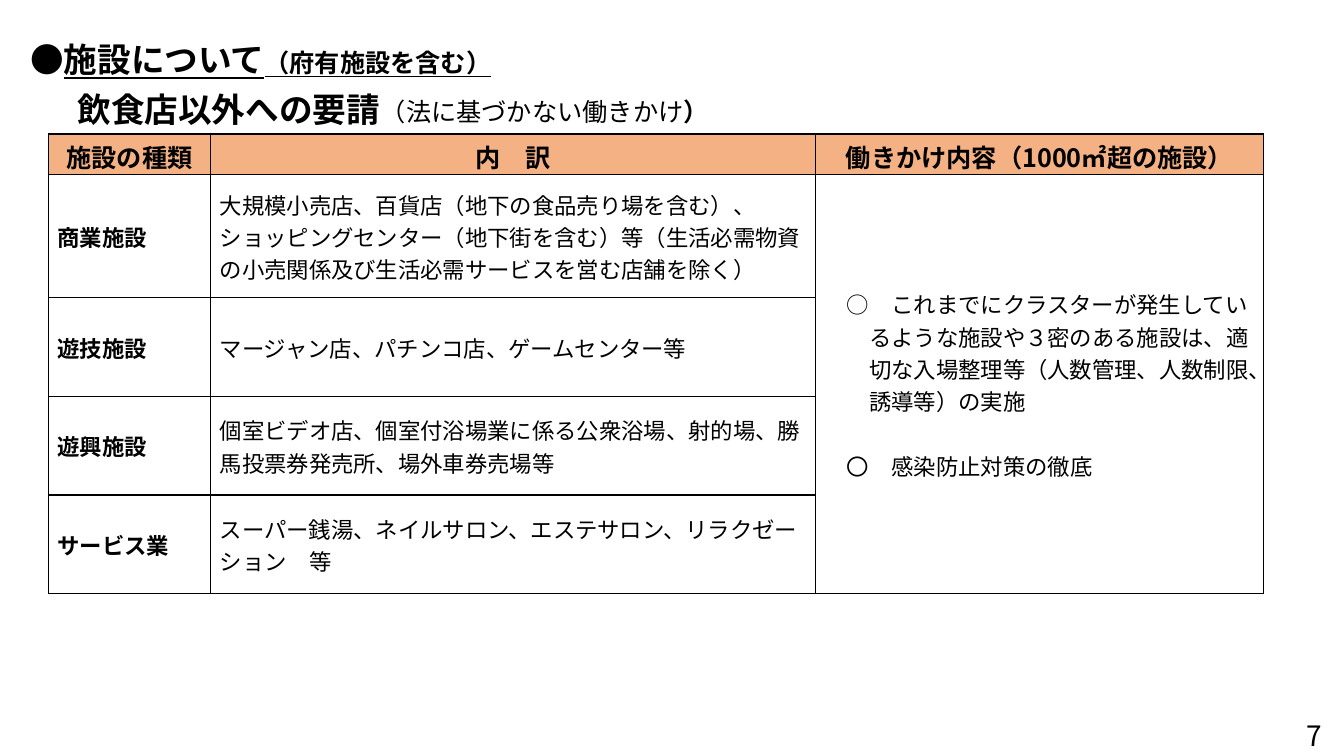
from dataclasses import dataclass

from pptx import Presentation
from pptx.dml.color import RGBColor
from pptx.enum.text import MSO_ANCHOR as ANCHOR, MSO_AUTO_SIZE as AUTO, PP_ALIGN as ALIGN
from pptx.oxml.ns import qn
from pptx.util import Inches, Pt
from lxml.etree import SubElement


@dataclass(frozen=True)
class Theme:
    font: str = "Noto Sans CJK JP"
    ink: str = "000000"
    header: str = "F4B183"
    heading: int = 24
    label: int = 18
    body: int = 16
    number: int = 20
    rule: float = 1


THEME = Theme()


def write(p, text, size=THEME.body, bold=False, underline=False, align=None,
          left=0, hanging=0, before=None, line=None):
    """Add a run to a paragraph and set the paragraph's layout."""
    pPr = p._p.get_or_add_pPr()
    if left:
        pPr.set("marL", str(Inches(left)))
        pPr.set("indent", str(-Inches(hanging)))
    if align is not None:
        p.alignment = align
    if before is not None:
        p.space_before = Pt(before)
    if line is not None:
        p.line_spacing = Pt(line)
    r = p.add_run()
    r.text = text
    r.font.size = Pt(size)
    r.font.bold = bold
    r.font.underline = underline
    r.font.color.rgb = RGBColor.from_string(THEME.ink)
    r.font.name = THEME.font
    rPr = r.font._element
    rPr.set("lang", "ja-JP")
    SubElement(rPr, qn("a:ea"), typeface=THEME.font)


class SlideBuilder:
    def __init__(self, prs):
        self.theme = THEME
        self.s = prs.slides.add_slide(prs.slide_layouts[5])

    def title(self, box, runs):
        sp = self.s.shapes.title
        sp.left, sp.top, sp.width, sp.height = map(Inches, box)
        self.fill_frame(sp.text_frame, runs, align=ALIGN.LEFT)

    def text(self, box, runs, wrap=True, anchor=ANCHOR.TOP, **fmt):
        sp = self.s.shapes.add_textbox(*map(Inches, box))
        self.fill_frame(sp.text_frame, runs, wrap, anchor, **fmt)

    def fill_frame(self, tf, runs, wrap=True, anchor=ANCHOR.TOP, **fmt):
        tf.word_wrap = wrap
        tf.auto_size = AUTO.NONE
        tf.vertical_anchor = anchor
        for text, style in runs:
            write(tf.paragraphs[0], text, **style, **fmt)

    def table(self, box, widths, heights):
        shape = self.s.shapes.add_table(len(heights), len(widths), *map(Inches, box))
        table = shape.table
        table.first_row = table.horz_banding = False
        for col, width in zip(table.columns, widths):
            col.width = Inches(width)
        for row, height in zip(table.rows, heights):
            row.height = Inches(height)
        for cell in table.iter_cells():
            self.border(cell)
            cell.fill.background()
            cell.vertical_anchor = ANCHOR.MIDDLE
            cell.margin_left = cell.margin_right = cell.margin_top = Inches(0.01)
            cell.margin_bottom = 0
        return table

    def border(self, cell):
        tcPr = cell._tc.get_or_add_tcPr()
        for side in ("lnL", "lnR", "lnT", "lnB"):
            ln = SubElement(tcPr, qn(f"a:{side}"), w=str(Pt(self.theme.rule)))
            SubElement(SubElement(ln, qn("a:solidFill")), qn("a:srgbClr"), val=self.theme.ink)

    def header_cell(self, cell, text):
        cell.fill.solid()
        cell.fill.fore_color.rgb = RGBColor.from_string(self.theme.header)
        cell.margin_top = Inches(0.04)
        write(cell.text_frame.paragraphs[0], text, self.theme.label, True, align=ALIGN.CENTER)

    def body_cell(self, cell, text, bold=False):
        write(cell.text_frame.paragraphs[0], text, bold=bold, left=0.08)

    def list_cell(self, cell, items):
        tf = cell.text_frame
        for i, item in enumerate(items):
            p = tf.add_paragraph() if i else tf.paragraphs[0]
            write(p, item, left=0.52, hanging=0.22, before=23 if i else 0)


HEADERS = ["施設の種類", "内　訳", "働きかけ内容（1000㎡超の施設）"]
FACILITIES = [
    ("商業施設", "大規模小売店、百貨店（地下の食品売り場を含む）、ショッピングセンター（地下街を含む）等"
     "（生活必需物資の小売関係及び生活必需サービスを営む店舗を除く）"),
    ("遊技施設", "マージャン店、パチンコ店、ゲームセンター等"),
    ("遊興施設", "個室ビデオ店、個室付浴場業に係る公衆浴場、射的場、勝馬投票券発売所、場外車券売場等"),
    ("サービス業", "スーパー銭湯、ネイルサロン、エステサロン、リラクゼーション　等"),
]
REQUESTS = [
    "○　これまでにクラスターが発生しているような施設や３密のある施設は、"
    "適切な入場整理等（人数管理、人数制限、誘導等）の実施",
    "〇　感染防止対策の徹底",
]


def main():
    prs = Presentation()
    prs.slide_width, prs.slide_height = Inches(13.33), Inches(7.5)
    slide = SlideBuilder(prs)
    heading = dict(size=THEME.heading, bold=True)
    label = dict(size=THEME.label)

    slide.title((0.2, 0.34, 7.39, 0.5), [
        ("●", heading),
        ("施設について", dict(heading, underline=True)),
        ("（府有施設を含む）", dict(label, bold=True, underline=True)),
    ])
    slide.text((0.67, 0.83, 5.02, 0.5), [("飲食店以外への要請", heading)])
    slide.text((3.68, 0.89, 3.48, 0.42), [
        ("（法に基づかない働きかけ", label),
        ("）", dict(label, bold=True)),
    ], wrap=False, line=23)

    table = slide.table((0.48, 1.33, 12.05, 4.55), [1.61, 6, 4.44], [0.39, 1.22] + [0.98] * 3)
    for col, text in enumerate(HEADERS):
        slide.header_cell(table.cell(0, col), text)
    for row, (kind, detail) in enumerate(FACILITIES, 1):
        slide.body_cell(table.cell(row, 0), kind, bold=True)
        slide.body_cell(table.cell(row, 1), detail)
    requests = table.cell(1, 2)
    requests.merge(table.cell(len(FACILITIES), 2))
    slide.list_cell(requests, REQUESTS)

    slide.text((10.21, 7.09, 3, 0.4), [("7", dict(size=THEME.number))],
               anchor=ANCHOR.MIDDLE, align=ALIGN.RIGHT)
    prs.save("out.pptx")


if __name__ == "__main__":
    main()
